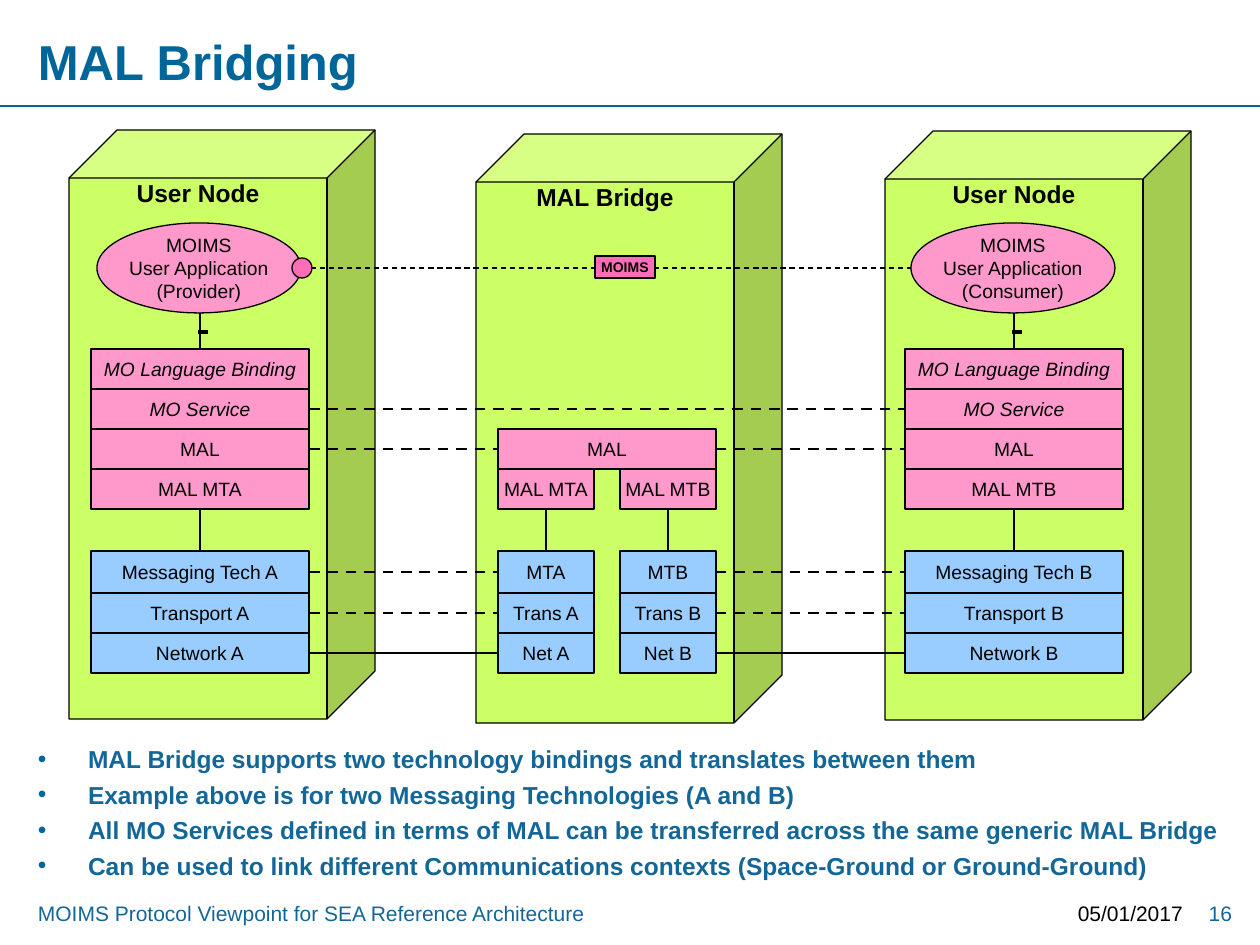
"""Build the MAL Bridging slide: two user nodes joined by a protocol bridge."""
from lxml.etree import SubElement
from pptx import Presentation
from pptx.dml.color import RGBColor
from pptx.enum.dml import MSO_LINE_DASH_STYLE as Dash
from pptx.enum.shapes import MSO_CONNECTOR as Connector, MSO_SHAPE as Shape
from pptx.enum.text import MSO_ANCHOR as Anchor, MSO_AUTO_SIZE as AutoSize, PP_ALIGN as Align
from pptx.oxml.ns import qn
from pptx.util import Emu, Pt

BLACK = RGBColor(0x00, 0x00, 0x00)
TEAL = RGBColor(0x00, 0x66, 0x99)
BLUE = RGBColor(0x13, 0x67, 0x98)
LIME = RGBColor(0xCC, 0xFF, 0x66)
PINK = RGBColor(0xFF, 0x99, 0xCC)
ROSE = RGBColor(0xFF, 0x6D, 0xB6)
SKY = RGBColor(0x99, 0xCC, 0xFF)

TOP, LEFT, BOTTOM, RIGHT = range(4)
NODE_W, NODE_H = 306, 589
STACK_W, HALF_W, ROW_H = 218, 96, 40
APP_TOP, APP_W, APP_H = 223, 204, 90
APP_MIDDLE = APP_TOP + APP_H // 2
UPPER_TOP, LOWER_TOP = 349, 551
UPPER_ROWS = ["MO Language Binding", "MO Service", "MAL"]
BULLETS = [
    "MAL Bridge supports two technology bindings and translates between them",
    "Example above is for two Messaging Technologies (A and B)",
    "All MO Services defined in terms of MAL can be transferred across the same generic MAL Bridge",
    "Can be used to link different Communications contexts (Space-Ground or Ground-Ground)",
]


def px(value):
    """Turn a length in px into EMU."""
    return Emu(round(value * 914400 / 126))


def place(shape, left, top, width, height):
    """Set the position and size of a shape."""
    shape.left, shape.top, shape.width, shape.height = map(px, (left, top, width, height))


def write(frame, lines, size=11, color=BLACK, bold=False, italic=False, align=Align.CENTER,
          anchor=Anchor.MIDDLE, margins=(2, 2), wrap=True, gap=0):
    """Fill a text frame with one paragraph per line, and return the paragraphs."""
    frame.word_wrap, frame.auto_size, frame.vertical_anchor = wrap, AutoSize.NONE, anchor
    frame.margin_left = frame.margin_right = px(margins[0])
    frame.margin_top = frame.margin_bottom = px(margins[1])
    for index, line in enumerate(lines):
        para = frame.paragraphs[0] if index == 0 else frame.add_paragraph()
        para.alignment = align
        para.space_before = Pt(gap if index else 0)
        span = para.add_run()
        span.text = line
        span.font.name, span.font.size = "Arial", Pt(size)
        span.font.bold, span.font.italic = bold, italic
        span.font.color.rgb = color
    return frame.paragraphs


def add_bullet(para):
    """Give a paragraph a hanging bullet."""
    props = para._p.get_or_add_pPr()
    props.set("marL", str(px(50)))
    props.set("indent", str(px(-50)))
    color = SubElement(props, qn("a:buClr"))
    SubElement(color, qn("a:srgbClr")).set("val", str(TEAL))
    SubElement(props, qn("a:buChar")).set("char", "•")


def add_figure(page, kind, bounds, fill, lines=(), **style):
    """Add an outlined preset shape with optional text."""
    figure = page.shapes.add_shape(kind, *map(px, bounds))
    figure.shadow.inherit = False
    figure.fill.solid()
    figure.fill.fore_color.rgb = fill
    figure.line.color.rgb = BLACK
    figure.line.width = Pt(0.75)
    write(figure.text_frame, lines, **style)
    return figure


def add_line(page, start, end, width=1.5, color=BLACK, dashed=False):
    """Add a straight line without shadow."""
    line = page.shapes.add_connector(Connector.STRAIGHT, *map(px, (*start, *end)))
    line.line.color.rgb = color
    line.line.width = Pt(width)
    if dashed:
        line.line.dash_style = Dash.DASH
    SubElement(line._element.spPr, qn("a:effectLst"))
    return line


def join(page, first, first_side, second, second_side, dashed=False):
    """Join the sides of two boxes with a line."""
    line = add_line(page, (0, 0), (0, 0), dashed=dashed)
    line.begin_connect(first, first_side)
    line.end_connect(second, second_side)


def add_note(page, bounds, text, **style):
    """Add a plain one-line text box in the footer."""
    box = page.shapes.add_textbox(*map(px, bounds))
    write(box.text_frame, [text], size=12, anchor=Anchor.TOP, margins=(13, 6), **style)


def add_node(page, left, top, name):
    """Add a cube that stands for one node."""
    cube = add_figure(page, Shape.CUBE, (left, top, NODE_W, NODE_H), LIME, [name], size=14,
                      bold=True, anchor=Anchor.TOP, margins=(13, 0), wrap=False)
    cube.adjustments[0] = 0.157


def add_rows(page, left, top, width, names, fill):
    """Stack boxes downwards and return them."""
    return [add_figure(page, Shape.RECTANGLE, (left, top + index * ROW_H, width, ROW_H), fill,
                       [name], italic=name.startswith("MO "))
            for index, name in enumerate(names)]


def add_technology(page, left, width, names):
    """Stack the messaging, transport and network boxes; the first is slightly taller."""
    rows = add_rows(page, left, LOWER_TOP + 2, width, names, SKY)
    place(rows[0], left, LOWER_TOP, width, ROW_H + 2)
    return rows


def add_user_stack(page, left, role, letter):
    """Add a user application over its protocol stack and return both parts."""
    center = left + STACK_W // 2
    add_figure(page, Shape.OVAL, (center - APP_W // 2 - 1, APP_TOP, APP_W, APP_H), PINK,
               ["MOIMS", "User Application", f"({role})"], margins=(0, 6))
    upper = add_rows(page, left, UPPER_TOP, STACK_W, UPPER_ROWS + [f"MAL MT{letter}"], PINK)
    names = [f"{layer} {letter}" for layer in ("Messaging Tech", "Transport", "Network")]
    lower = add_technology(page, left, STACK_W, names)
    stem = add_line(page, (center, APP_TOP + APP_H), (center, UPPER_TOP))
    stem.end_connect(upper[0], TOP)
    add_line(page, (center - 2, 332), (center + 8, 332), width=2.25)
    join(page, upper[-1], BOTTOM, lower[0], TOP)
    return upper, lower


def add_bridge_half(page, left, letter):
    """Add one technology binding of the bridge and return its lower boxes."""
    binding = add_rows(page, left, UPPER_TOP + 3 * ROW_H, HALF_W, [f"MAL MT{letter}"], PINK)[0]
    lower = add_technology(page, left, HALF_W,
                           [f"MT{letter}", f"Trans {letter}", f"Net {letter}"])
    join(page, binding, BOTTOM, lower[0], TOP)
    return lower


def main():
    """Build and save the deck."""
    deck = Presentation()
    deck.slide_width, deck.slide_height = px(1260), px(945)
    page = deck.slides.add_slide(deck.slide_layouts[1])
    title, body = page.shapes.title, page.placeholders[1]
    place(title, 25, 26, 1002, 70)
    write(title.text_frame, ["MAL Bridging"], size=28, color=TEAL, bold=True,
          align=Align.LEFT, margins=(13, 6))
    place(body, 25, 738, 1221, 139)
    for para in write(body.text_frame, BULLETS, size=14, color=BLUE, bold=True, gap=3.5,
                      align=Align.LEFT, anchor=Anchor.TOP, margins=(13, 6)):
        add_bullet(para)
    add_line(page, (0, 106), (1260, 106), color=TEAL)

    for left, top, name in ((476, 134, "MAL Bridge"), (69, 130, "User Node"),
                            (885, 131, "User Node")):
        add_node(page, left, top, name)
    provider, provider_tech = add_user_stack(page, 91, "Provider", "A")
    consumer, consumer_tech = add_user_stack(page, 905, "Consumer", "B")
    join(page, provider[1], RIGHT, consumer[1], LEFT, dashed=True)

    bridge = add_rows(page, 498, UPPER_TOP + 2 * ROW_H, STACK_W, ["MAL"], PINK)[0]
    join(page, provider[2], RIGHT, bridge, LEFT, dashed=True)
    join(page, bridge, RIGHT, consumer[2], LEFT, dashed=True)
    sides = ((provider_tech, add_bridge_half(page, 498, "A")),
             (add_bridge_half(page, 620, "B"), consumer_tech))
    for firsts, seconds in sides:
        for first, second, dashed in zip(firsts, seconds, (True, True, False)):
            join(page, first, RIGHT, second, LEFT, dashed=dashed)

    add_line(page, (302, APP_MIDDLE), (911, APP_MIDDLE), width=0.75, dashed=True)
    add_figure(page, Shape.OVAL, (292, APP_MIDDLE - 10, 20, 20), ROSE)
    add_figure(page, Shape.RECTANGLE, (595, 256, 60, 22), ROSE, ["MOIMS"], size=8, bold=True)

    add_note(page, (25, 895, 1022, 38), "MOIMS Protocol Viewpoint for SEA Reference Architecture",
             color=BLUE, align=Align.LEFT)
    add_note(page, (1057, 895, 139, 38), "05/01/2017", align=Align.RIGHT)
    add_note(page, (1186, 895, 59, 38), "16", color=BLUE, align=Align.RIGHT)
    deck.save("out.pptx")


if __name__ == "__main__":
    main()
